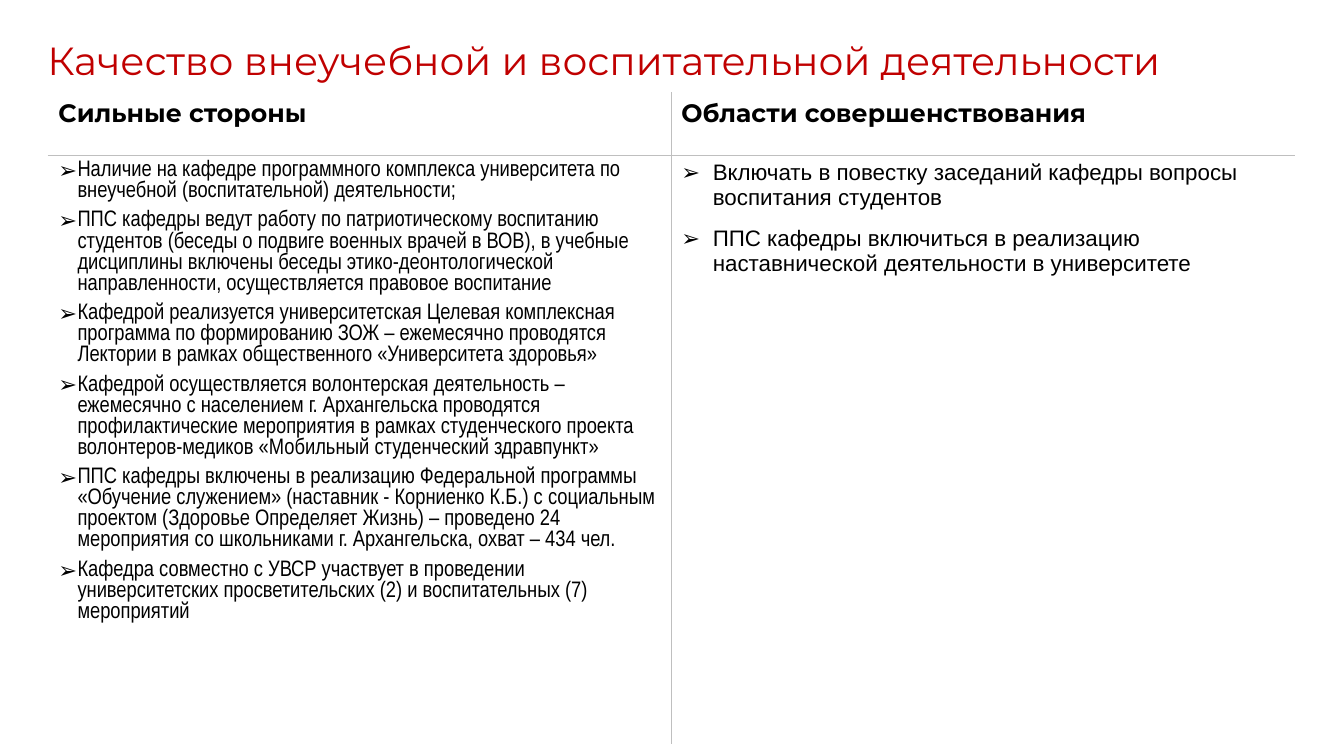
from lxml.etree import SubElement
from pptx import Presentation
from pptx.dml.color import RGBColor
from pptx.enum.text import MSO_ANCHOR, MSO_AUTO_SIZE, PP_ALIGN
from pptx.oxml.ns import qn
from pptx.util import Cm, Pt

RED, BLACK, WHITE, GREY = "C00000", "000000", "FFFFFF", "BFBFBF"

# heading, font of the list, indent in cm, space after in points, items
COLUMNS = [
    ("Сильные стороны", "Arial Narrow", 0.48, 6, [
        "Наличие на кафедре программного комплекса университета по внеучебной "
        "(воспитательной) деятельности;",
        "ППС кафедры ведут работу по патриотическому воспитанию студентов (беседы о подвиге "
        "военных врачей в ВОВ), в учебные дисциплины включены беседы "
        "этико-деонтологической направленности, осуществляется правовое воспитание",
        "Кафедрой реализуется университетская Целевая комплексная программа по формированию "
        "ЗОЖ – ежемесячно проводятся Лектории в рамках общественного "
        "«Университета здоровья»",
        "Кафедрой осуществляется волонтерская деятельность – ежемесячно с населением "
        "г. Архангельска проводятся профилактические мероприятия в рамках студенческого "
        "проекта волонтеров-медиков «Мобильный студенческий здравпункт»",
        "ППС кафедры включены в реализацию Федеральной программы «Обучение служением» "
        "(наставник - Корниенко К.Б.) с социальным проектом (Здоровье Определяет Жизнь) – "
        "проведено 24 мероприятия со школьниками г. Архангельска, охват – 434 чел.",
        "Кафедра совместно с УВСР участвует в проведении университетских "
        "просветительских (2) и воспитательных (7) мероприятий",
    ]),
    ("Области совершенствования", "Arial", 0.79, 12, [
        "Включать в повестку заседаний кафедры вопросы воспитания студентов",
        "ППС кафедры включиться в реализацию наставнической деятельности в университете",
    ]),
]


def style(paragraph, font_name, size, color, bold=False):
    paragraph.alignment = PP_ALIGN.LEFT
    for run in paragraph.runs:
        run.font.name = font_name
        run.font.size = Pt(size)
        run.font.bold = bold
        run.font.color.rgb = RGBColor.from_string(color)


def add_border(cell, side, color):
    line = SubElement(cell._tc.get_or_add_tcPr(), qn(f"a:ln{side}"), w=str(Pt(1)))
    SubElement(SubElement(line, qn("a:solidFill")), qn("a:srgbClr"), val=color)


prs = Presentation()
prs.slide_width, prs.slide_height = Cm(33.87), Cm(19.05)
slide = prs.slides.add_slide(prs.slide_layouts[5])

title = slide.shapes.title
title.left, title.top, title.width, title.height = Cm(0.94), Cm(0.79), Cm(31.14), Cm(1.45)
title_frame = title.text_frame
title_frame.text = "Качество внеучебной и воспитательной деятельности"
title_frame.word_wrap = True
title_frame.auto_size = MSO_AUTO_SIZE.NONE
title_frame.vertical_anchor = MSO_ANCHOR.MIDDLE
style(title_frame.paragraphs[0], "Montserrat", 28, RED)

table = slide.shapes.add_table(2, 2, Cm(1.22), Cm(2.34), Cm(31.4), Cm(16.43)).table
table.first_row = table.horz_banding = False
table.rows[0].height, table.rows[1].height = Cm(1.57), Cm(14.86)

for col, (heading, list_font, indent, gap, items) in enumerate(COLUMNS):
    table.columns[col].width = Cm(15.7)
    heading_cell, list_cell = table.cell(0, col), table.cell(1, col)

    heading_cell.text_frame.text = heading
    style(heading_cell.text_frame.paragraphs[0], "Montserrat", 18, BLACK, bold=True)

    list_cell.text_frame.text = "\n".join(items)
    for item in list_cell.text_frame.paragraphs:
        style(item, list_font, 16, BLACK)
        item.space_after = Pt(gap)
        props = item._p.get_or_add_pPr()
        props.set("marL", str(Cm(indent)))
        props.set("indent", str(-Cm(indent)))
        SubElement(props, qn("a:buFont"), typeface="Arial")
        SubElement(props, qn("a:buChar"), char="➢")

    # Only the lines between cells are grey
    for row, cell in enumerate((heading_cell, list_cell)):
        inner_sides = ("R" if col == 0 else "L", "B" if row == 0 else "T")
        for side in "LRTB":
            add_border(cell, side, GREY if side in inner_sides else WHITE)
        cell.fill.background()

prs.save("out.pptx")
